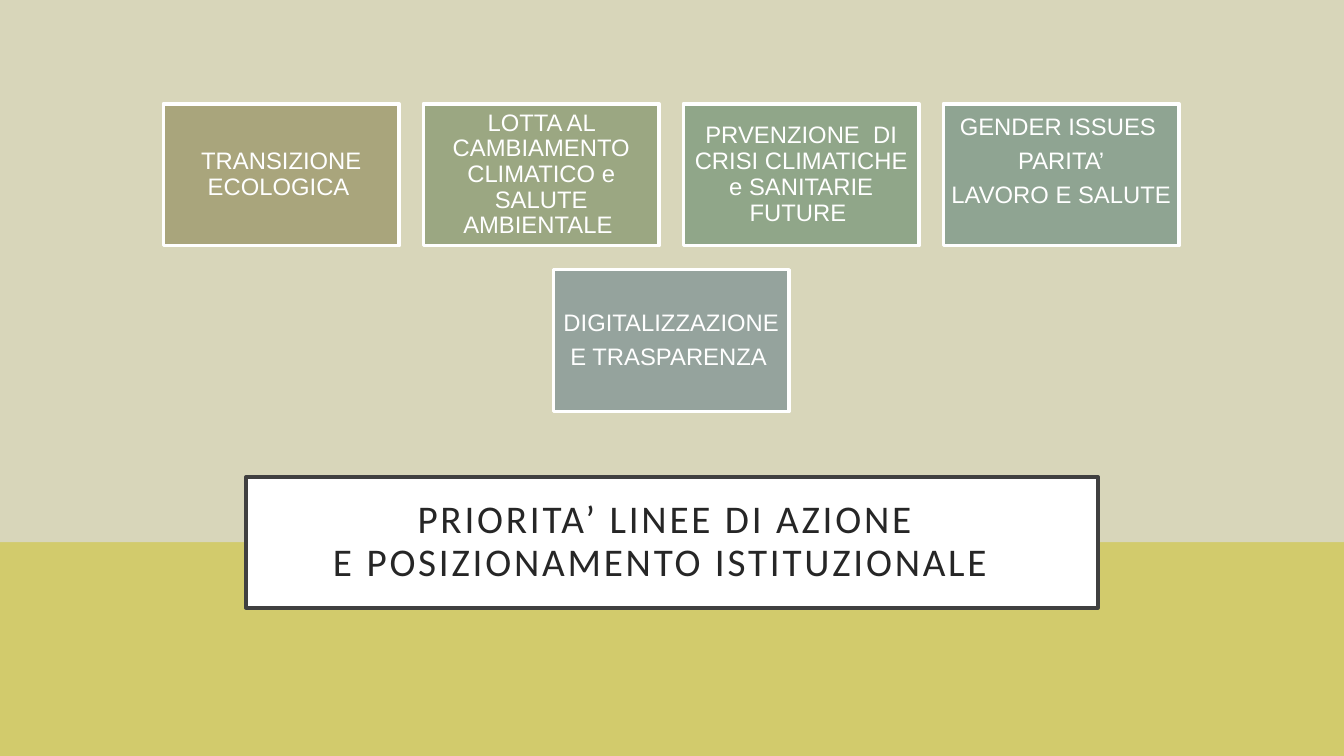
from pptx import Presentation
from pptx.dml.color import RGBColor
from pptx.enum.shapes import MSO_SHAPE as Shape
from pptx.enum.text import MSO_ANCHOR as Anchor, PP_ALIGN as Align
from pptx.util import Pt

WHITE = RGBColor(0xFF, 0xFF, 0xFF)
SAND = RGBColor(0xD8, 0xD6, 0xBA)
LIME = RGBColor(0xD2, 0xCB, 0x6C)
FRAME = RGBColor(0x40, 0x40, 0x40)
INK = RGBColor(0x26, 0x26, 0x26)
KHAKI = RGBColor(0xA9, 0xA5, 0x7C)
OLIVE = RGBColor(0x9B, 0xA7, 0x82)
SAGE = RGBColor(0x90, 0xA6, 0x89)
MOSS = RGBColor(0x8F, 0xA4, 0x92)
SLATE = RGBColor(0x95, 0xA3, 0x9D)

SLIDE_WIDTH, SLIDE_HEIGHT, HORIZON = 960, 540, 387.2
CARD_WIDTH, CARD_HEIGHT, CARD_GAP = 168.5, 101.3, 17.2
CARDS_CENTER, CARDS_TOP = 479.5, 74.2

CARD_ROWS = [
    [
        ("TRANSIZIONE ECOLOGICA ", KHAKI),
        ("LOTTA AL CAMBIAMENTO CLIMATICO e SALUTE AMBIENTALE ", OLIVE),
        ("PRVENZIONE  DI CRISI CLIMATICHE e SANITARIE FUTURE ", SAGE),
        ("GENDER ISSUES \nPARITA’\nLAVORO E SALUTE  ", MOSS),
    ],
    [("DIGITALIZZAZIONE\nE TRASPARENZA ", SLATE)],
]

deck = Presentation()
deck.slide_width, deck.slide_height = Pt(SLIDE_WIDTH), Pt(SLIDE_HEIGHT)
page = deck.slides.add_slide(deck.slide_layouts[6])


def add_box(left, top, width, height, fill, line=None):
    box = page.shapes.add_shape(Shape.RECTANGLE, Pt(left), Pt(top), Pt(width), Pt(height))
    box.shadow.inherit = False
    box.fill.solid()
    box.fill.fore_color.rgb = fill
    if line is None:
        box.line.fill.background()
    else:
        box.line.color.rgb = line
        box.line.width = Pt(2.5)
    return box


def write_text(box, text, font, size, color, inset, space_after=0, spacing=0):
    frame = box.text_frame
    frame.text = text
    frame.word_wrap = True
    frame.vertical_anchor = Anchor.MIDDLE
    frame.margin_left = frame.margin_right = Pt(inset)
    frame.margin_top = frame.margin_bottom = Pt(inset)
    for para in frame.paragraphs:
        para.alignment = Align.CENTER
        para.line_spacing = 0.9
        para.space_after = Pt(space_after)
        for span in para.runs:
            span.font.name = font
            span.font.size = Pt(size)
            span.font.color.rgb = color
            if spacing:
                span.font._element.set("spc", str(spacing * 100))


add_box(0, HORIZON, SLIDE_WIDTH, SLIDE_HEIGHT - HORIZON, LIME)
add_box(0, 0, SLIDE_WIDTH, HORIZON, SAND)

title = add_box(175.7, 340.6, 608.6, 93.6, WHITE, FRAME)
write_text(title, "PRIORITA’ LINEE DI AZIONE \vE POSIZIONAMENTO ISTITUZIONALE  ",
           "Calibri", 28, INK, 14.4, spacing=2)

for row, cards in enumerate(CARD_ROWS):
    row_width = len(cards) * (CARD_WIDTH + CARD_GAP) - CARD_GAP
    row_left = CARDS_CENTER - row_width / 2
    top = CARDS_TOP + row * (CARD_HEIGHT + CARD_GAP)
    for column, (text, fill) in enumerate(cards):
        left = row_left + column * (CARD_WIDTH + CARD_GAP)
        card = add_box(left, top, CARD_WIDTH, CARD_HEIGHT, fill, WHITE)
        write_text(card, text, "Arial", 17, WHITE, 5.1, space_after=6)

deck.save("out.pptx")
